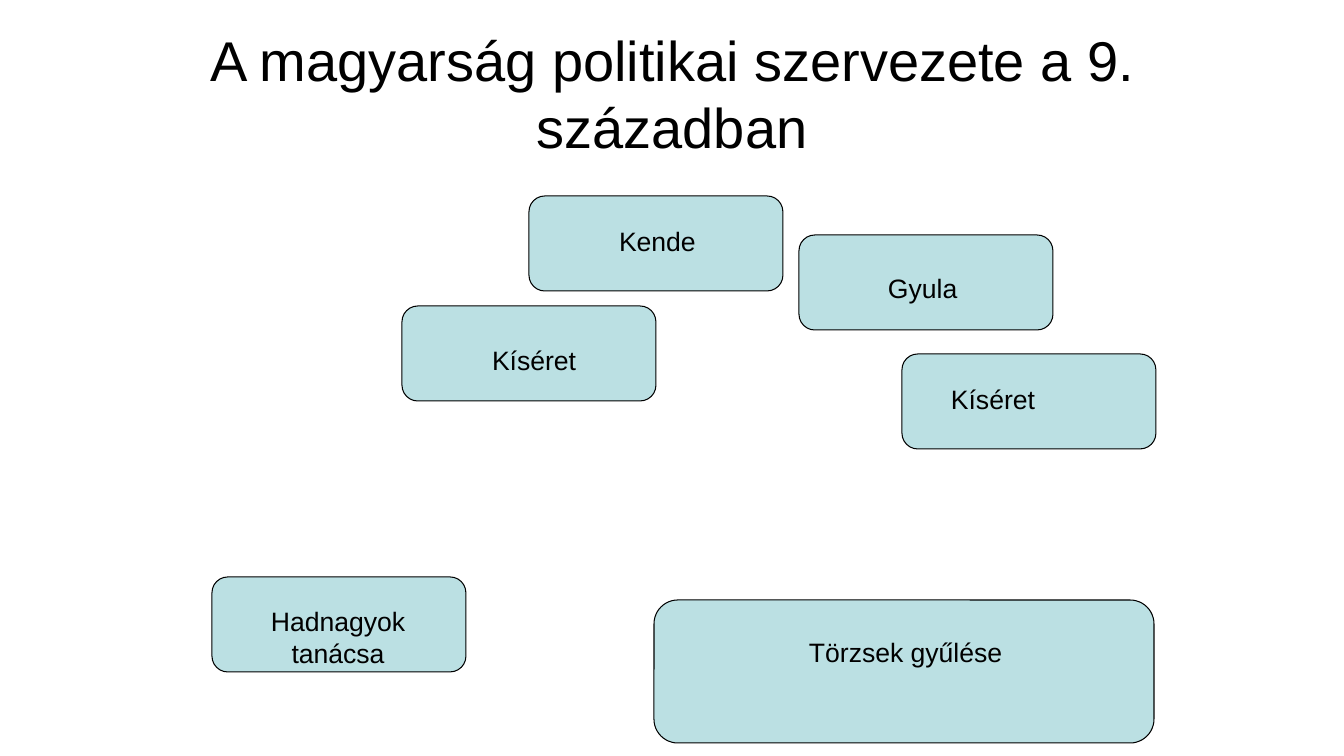
import pptx
import pptx.dml.color
import pptx.enum.shapes
import pptx.enum.text
import pptx.util

EMU_PER_PX = 914400 / 100.8
FONT = "Arial"
COLOURS = {"text": "000000", "box": "BBE0E3", "outline": "000000", "page": "FFFFFF"}
ALIGN = pptx.enum.text.PP_ALIGN
BOX_SIZE = (254, 95)

# name, box position, box size, label position, label size, alignment
OFFICES = [
    ("Kende", (529, 196), BOX_SIZE, (609, 220), (103, 42), ALIGN.LEFT),
    ("Kíséret", (402, 306), BOX_SIZE, (482, 339), (111, 42), ALIGN.LEFT),
    ("Gyula", (799, 235), BOX_SIZE, (878, 267), (111, 42), ALIGN.LEFT),
    ("Hadnagyok tanácsa", (212, 577), BOX_SIZE, (251, 600), (174, 75), ALIGN.CENTER),
    ("Törzsek gyűlése", (654, 600), (500, 143), (799, 631), (222, 42), ALIGN.LEFT),
    ("Kíséret", (902, 354), BOX_SIZE, (941, 378), (135, 42), ALIGN.LEFT),
]


def px(length):
    return pptx.util.Emu(round(length * EMU_PER_PX))


def colour(name):
    return pptx.dml.color.RGBColor.from_string(COLOURS[name])


def write(frame, text, size, align, insets):
    """Put one formatted run into a frame; insets are horizontal and vertical px."""
    frame.word_wrap = True
    frame.margin_left = frame.margin_right = px(insets[0])
    frame.margin_top = frame.margin_bottom = px(insets[1])
    para = frame.paragraphs[0]
    para.alignment = align
    span = para.add_run()
    span.text = text
    span.font.name = FONT
    span.font.size = pptx.util.Pt(size)
    span.font.color.rgb = colour("text")


def add_title(page, text):
    title = page.shapes.title
    title.left, title.top, title.width, title.height = map(px, (67, 30, 1210, 126))
    write(title.text_frame, text, 40, ALIGN.CENTER, (13, 7))
    title.text_frame.auto_size = pptx.enum.text.MSO_AUTO_SIZE.NONE
    title.text_frame.vertical_anchor = pptx.enum.text.MSO_ANCHOR.MIDDLE


def add_box(page, position, size):
    box = page.shapes.add_shape(
        pptx.enum.shapes.MSO_SHAPE.ROUNDED_RECTANGLE, *map(px, position + size))
    box.shadow.inherit = False
    box.fill.solid()
    box.fill.fore_color.rgb = colour("box")
    box.line.color.rgb = colour("outline")
    box.line.width = pptx.util.Pt(0.75)


def add_label(page, text, position, size, align):
    label = page.shapes.add_textbox(*map(px, position + size))
    write(label.text_frame, text, 19, align, (10, 5))
    label.text_frame.auto_size = pptx.enum.text.MSO_AUTO_SIZE.SHAPE_TO_FIT_TEXT


def main():
    deck = pptx.Presentation()
    deck.slide_width, deck.slide_height = px(1344), px(756)
    page = deck.slides.add_slide(deck.slide_layouts.get_by_name("Title Only"))
    page.background.fill.solid()
    page.background.fill.fore_color.rgb = colour("page")
    add_title(page, "A magyarság politikai szervezete a 9. században")
    for name, box_at, box_size, label_at, label_size, align in OFFICES:
        add_box(page, box_at, box_size)
        add_label(page, name, label_at, label_size, align)
    deck.save("out.pptx")


if __name__ == "__main__":
    main()
